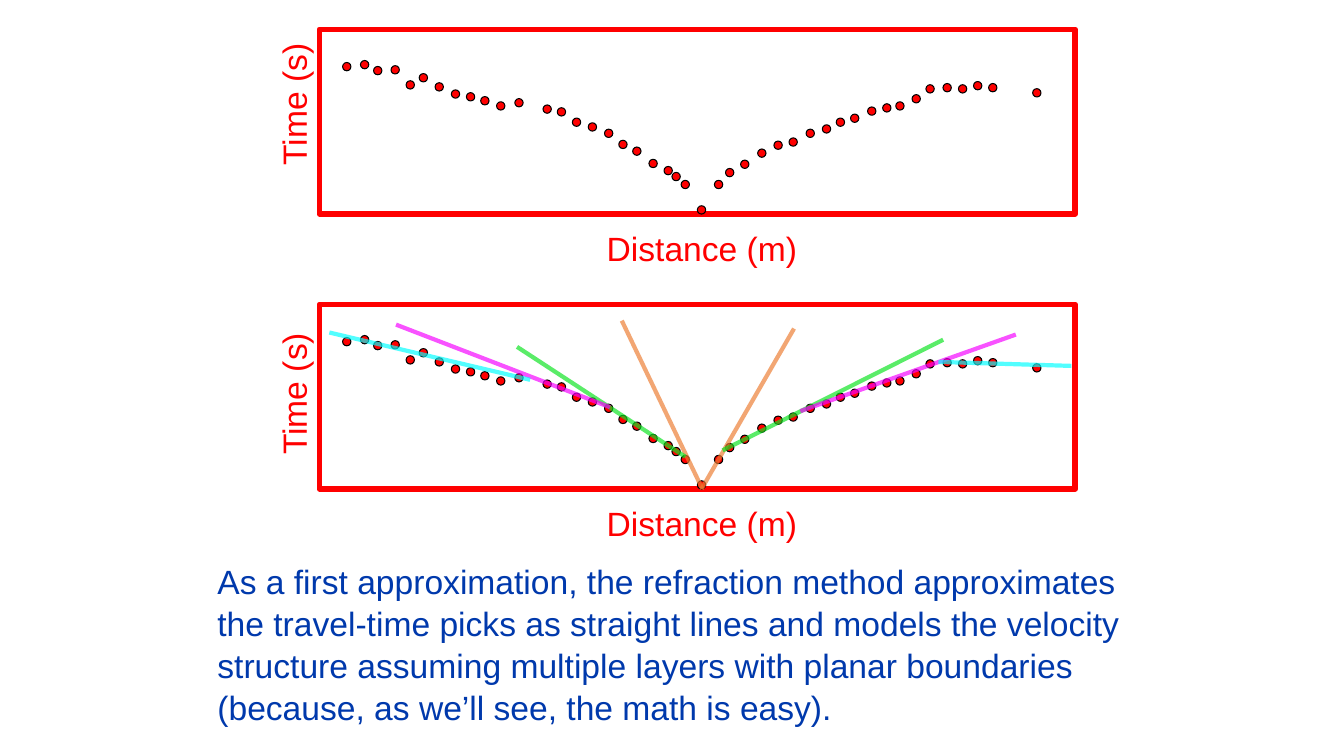
from lxml import etree
from pptx import Presentation
from pptx.dml.color import RGBColor
from pptx.enum import shapes, text
from pptx.oxml.ns import qn
from pptx.util import Cm, Pt

RED = RGBColor(0xFF, 0x00, 0x00)
AXIS_RED = RGBColor(0xFF, 0x33, 0x00)
BLACK = RGBColor(0x00, 0x00, 0x00)
BLUE = RGBColor(0x00, 0x39, 0xAC)
ORANGE = RGBColor(0xED, 0x7D, 0x31)
GREEN = RGBColor(0x0C, 0xE3, 0x21)
MAGENTA = RGBColor(0xF6, 0x00, 0xFF)
CYAN = RGBColor(0x01, 0xFE, 0xFF)

# All lengths are in centimetres; picks and fits are measured from a panel's top left.
PANEL_LEFT, PANEL_WIDTH, PANEL_HEIGHT = 8.05, 19.05, 4.65
DOT = 0.21

PICKS = [
    (0.69, 0.94), (1.14, 0.89), (1.47, 1.04), (1.91, 1.02), (2.29, 1.40),
    (2.62, 1.22), (3.02, 1.45), (3.43, 1.63), (3.81, 1.70), (4.17, 1.80),
    (4.57, 1.93), (5.03, 1.85), (5.74, 2.01), (6.10, 2.08), (6.48, 2.34),
    (6.88, 2.46), (7.29, 2.62), (7.65, 2.90), (8.00, 3.07), (8.41, 3.38),
    (8.79, 3.56), (8.99, 3.71), (9.22, 3.91), (9.63, 4.55), (10.06, 3.91),
    (10.34, 3.61), (10.72, 3.40), (11.15, 3.12), (11.56, 2.92), (11.94, 2.84),
    (12.37, 2.62), (12.78, 2.51), (13.13, 2.34), (13.49, 2.24), (13.92, 2.06),
    (14.30, 1.98), (14.63, 1.93), (15.04, 1.75), (15.39, 1.50), (15.82, 1.47),
    (16.21, 1.50), (16.59, 1.42), (16.97, 1.47), (18.08, 1.60),
]

FITS = [
    (ORANGE, (9.63, 4.65), (11.96, 0.61)),
    (ORANGE, (9.65, 4.65), (7.62, 0.41)),
    (GREEN, (10.16, 3.68), (15.72, 0.89)),
    (GREEN, (9.22, 3.84), (4.98, 1.07)),
    (MAGENTA, (12.12, 2.69), (17.55, 0.76)),
    (MAGENTA, (7.32, 2.59), (1.93, 0.51)),
    (CYAN, (15.60, 1.45), (18.95, 1.55)),
    (CYAN, (5.31, 1.90), (0.25, 0.71)),
]

EXPLANATION = [
    "As a first approximation, the refraction method approximates",
    "the travel-time picks as straight lines and models the velocity",
    "structure assuming multiple layers with planar boundaries",
    "(because, as we’ll see, the math is easy).",
]


def add_text(s, lines, left, top, width, height, color=RED, rotation=0, space_before=0):
    sp = s.shapes.add_textbox(Cm(left), Cm(top), Cm(width), Cm(height))
    sp.rotation = rotation
    tf = sp.text_frame
    tf.word_wrap = False
    tf.auto_size = text.MSO_AUTO_SIZE.SHAPE_TO_FIT_TEXT
    for i, line in enumerate(lines):
        p = tf.paragraphs[0] if i == 0 else tf.add_paragraph()
        p.space_before = Pt(space_before)
        r = p.add_run()
        r.text = line
        r.font.name = "Arial"
        r.font.size = Pt(24)
        r.font.color.rgb = color


def add_outlined(s, kind, left, top, width, height, line, weight, fill=None):
    sp = s.shapes.add_shape(kind, Cm(left), Cm(top), Cm(width), Cm(height))
    sp.shadow.inherit = False
    if fill is None:
        sp.fill.background()
    else:
        sp.fill.solid()
        sp.fill.fore_color.rgb = fill
    sp.line.color.rgb = line
    sp.line.width = Pt(weight)


def add_line(s, start, end, color, weight, opacity=100):
    c = s.shapes.add_connector(shapes.MSO_CONNECTOR.STRAIGHT, *map(Cm, start + end))
    c.line.color.rgb = color
    c.line.width = Pt(weight)
    sp_pr = c.element.spPr
    etree.SubElement(sp_pr, qn("a:effectLst"))
    if opacity < 100:
        rgb = sp_pr.find(".//" + qn("a:srgbClr"))
        etree.SubElement(rgb, qn("a:alpha"), val=str(opacity * 1000))


def add_panel(s, top, time_label_offset):
    """Draw the framed plot of the travel-time picks with its axis labels."""
    add_line(s, (PANEL_LEFT, top + PANEL_HEIGHT), (PANEL_LEFT, top), AXIS_RED, 4)
    add_outlined(s, shapes.MSO_SHAPE.RECTANGLE, PANEL_LEFT, top,
                 PANEL_WIDTH, PANEL_HEIGHT, RED, 4)
    add_text(s, ["Time (s)"], 5.59, top + time_label_offset, 3.61, 1.27, rotation=270)
    add_text(s, ["Distance (m)"], 15.04, top + 4.87, 5.31, 1.27)
    for x, y in PICKS:
        add_outlined(s, shapes.MSO_SHAPE.OVAL, PANEL_LEFT + x - DOT / 2,
                     top + y - DOT / 2, DOT, DOT, BLACK, 0.75, fill=RED)


def add_fits(s, top):
    for color, (x1, y1), (x2, y2) in FITS:
        add_line(s, (PANEL_LEFT + x1, top + y1), (PANEL_LEFT + x2, top + y2),
                 color, 3, opacity=67)


def main():
    prs = Presentation()
    prs.slide_width, prs.slide_height = Cm(33.87), Cm(19.05)
    s = prs.slides.add_slide(prs.slide_layouts[6])
    picks_top, fits_top = 0.74, 7.67
    add_panel(s, picks_top, 1.24)
    add_panel(s, fits_top, 1.6)
    add_fits(s, fits_top)
    add_text(s, EXPLANATION, 5.23, 14, 23.47, 4.37, color=BLUE, space_before=1.2)
    prs.save("out.pptx")


if __name__ == "__main__":
    main()
